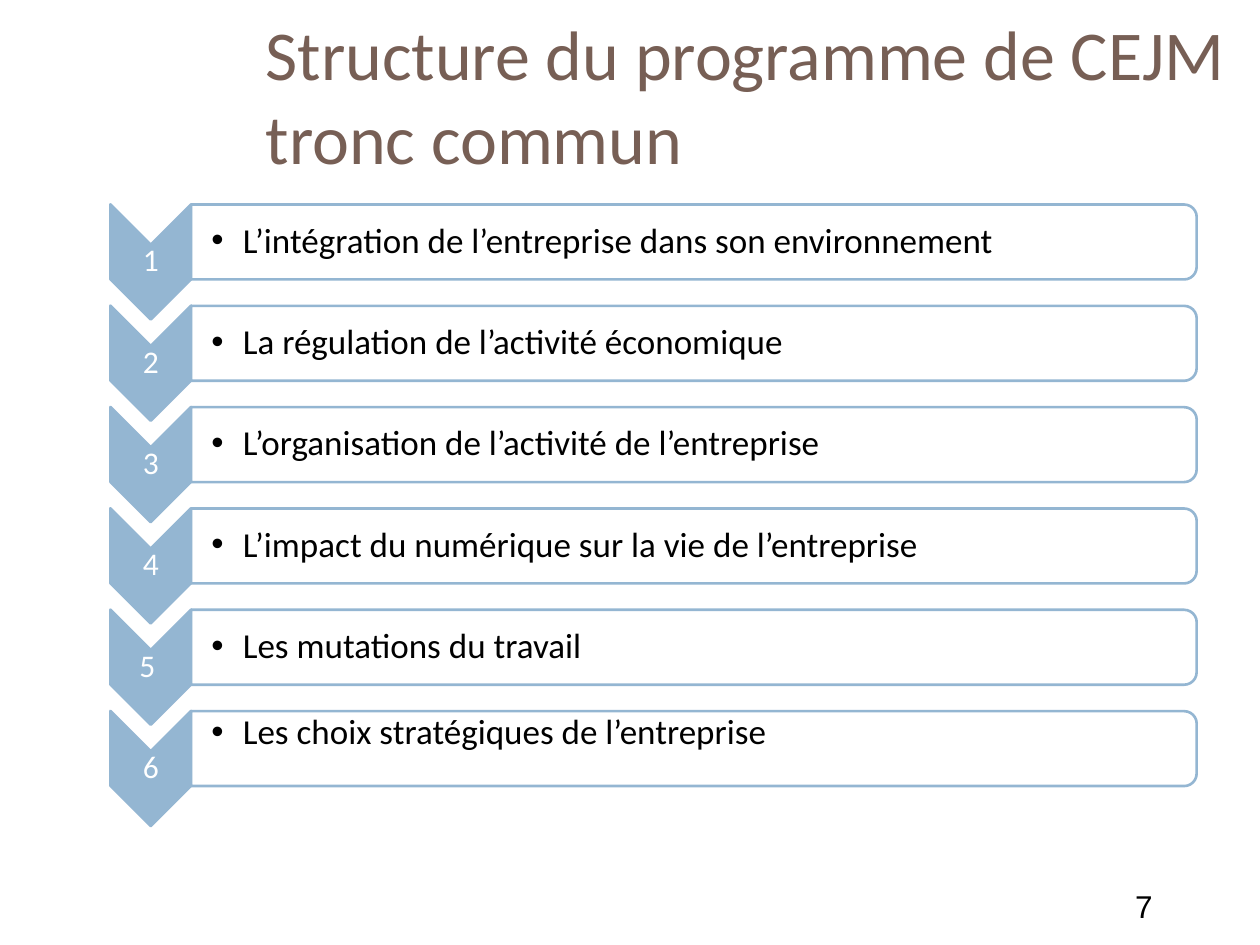
"""Build the slide listing the six themes of the CEJM common core programme."""
from lxml.etree import SubElement
from pptx import Presentation
from pptx.dml.color import RGBColor
from pptx.enum.shapes import MSO_SHAPE
from pptx.enum.text import MSO_ANCHOR, PP_ALIGN
from pptx.oxml.ns import qn
from pptx.util import Pt

BLUE, WHITE, BLACK, BROWN = "94B6D2", "FFFFFF", "000000", "775F55"
THEMES = [
    ("1", "L’intégration de l’entreprise dans son environnement"),
    ("2", "La régulation de l’activité économique"),
    ("3", "L’organisation de l’activité de l’entreprise"),
    ("4", "L’impact du numérique sur la vie de l’entreprise"),
    ("5 ", "Les mutations du travail"),
    ("6", "Les choix stratégiques de l’entreprise"),
]
ROW_STEP = 57.9

deck = Presentation()
deck.slide_width, deck.slide_height = Pt(720), Pt(540)
page = deck.slides.add_slide(deck.slide_layouts[6])


def add_text(text, place, size, color, font="Calibri", margins=(7.2, 3.6, 7.2, 3.6),
             anchor=MSO_ANCHOR.MIDDLE, bullet=False):
    box = page.shapes.add_textbox(*map(Pt, place))
    frame = box.text_frame
    frame.word_wrap = True
    frame.vertical_anchor = anchor
    (frame.margin_left, frame.margin_top,
     frame.margin_right, frame.margin_bottom) = map(Pt, margins)
    para = frame.paragraphs[0]
    if bullet:
        props = para._p.get_or_add_pPr()
        props.set("marL", str(Pt(18)))
        props.set("indent", str(Pt(-18)))
        SubElement(props, qn("a:buFont"), typeface="Arial")
        SubElement(props, qn("a:buChar"), char="•")
    span = para.add_run()
    span.text = text
    span.font.name = font
    span.font.size = Pt(size)
    span.font.color.rgb = RGBColor.from_string(color)
    return para


def add_turned_shape(preset, place, fill):
    shape = page.shapes.add_shape(preset, *map(Pt, place))
    shape.rotation = 90
    shape.shadow.inherit = False
    shape.fill.solid()
    shape.fill.fore_color.rgb = RGBColor.from_string(fill)
    shape.line.color.rgb = RGBColor.from_string(BLUE)
    shape.line.width = Pt(1.5)
    return shape


add_text("7", (641.5, 503.3, 35.3, 28.8), 18, BLACK, "Arial", anchor=MSO_ANCHOR.TOP)

for row, (number, theme) in enumerate(THEMES):
    drop = row * ROW_STEP
    last = row == len(THEMES) - 1

    add_turned_shape(MSO_SHAPE.CHEVRON, (53.2, 126.6, 65.8, 46.1)[:1]
                     + (126.6 + drop, 65.8, 46.1), BLUE)
    number_para = add_text(number, (63.2, 139.7 + drop, 46.1, 19.7), 18, WHITE,
                           margins=(0.7,) * 4)
    number_para.alignment = PP_ALIGN.CENTER
    number_para.line_spacing = 0.9

    panel = add_turned_shape(MSO_SHAPE.ROUND_2_SAME_RECTANGLE,
                             (375.1, -149 + drop, 42.8, 574.6), WHITE)
    panel_color = panel.fill._xPr.find(qn("a:solidFill"))[0]
    SubElement(panel_color, qn("a:alpha"), val="90000")
    theme_para = add_text(theme, (109.4, 118.9 + drop, 572.4, 38.7), 20, BLACK,
                          margins=(11.4, 0 if last else 0.7, 0.7, 0.7),
                          anchor=MSO_ANCHOR.TOP if last else MSO_ANCHOR.MIDDLE,
                          bullet=True)
    theme_para.line_spacing = 0.9

add_text("Structure du programme de CEJM tronc commun", (144.7, 15.1, 567.4, 77.8),
         40, BROWN)

deck.save("out.pptx")
